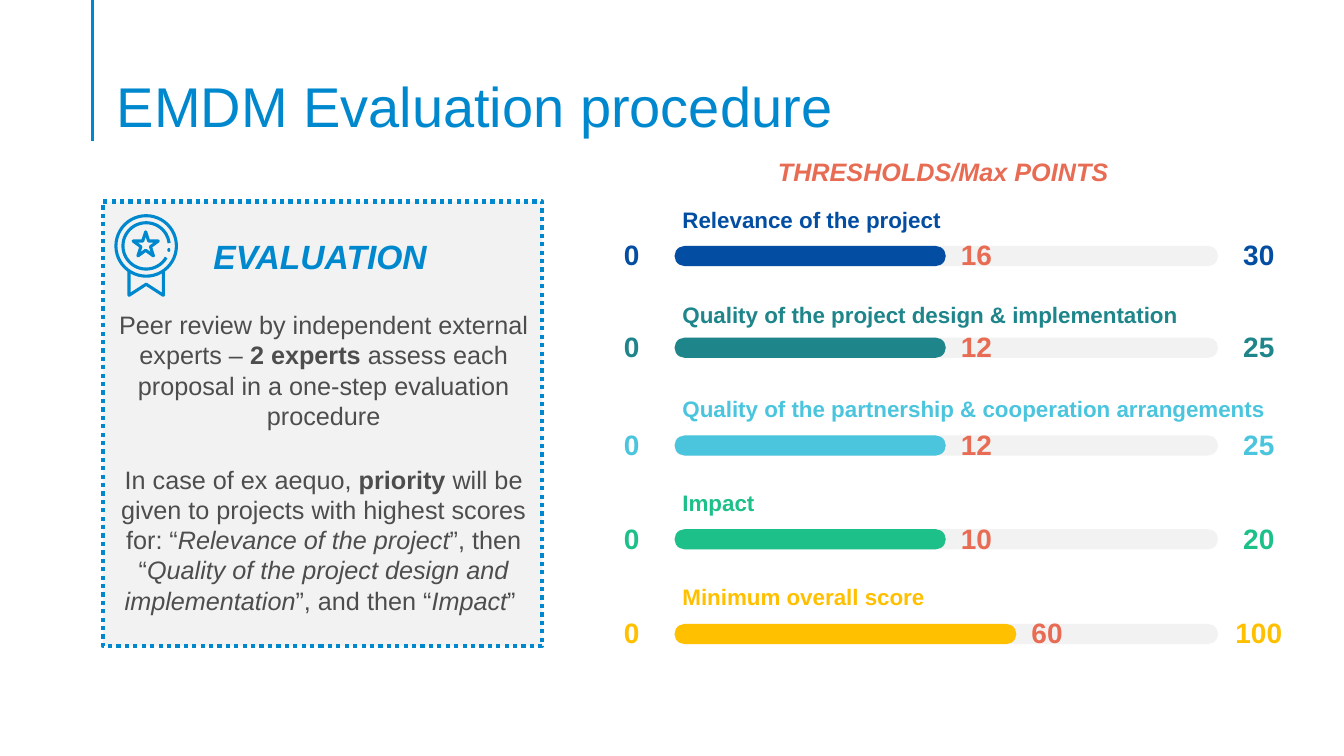
from lxml import etree
from pptx import Presentation
from pptx.dml.color import RGBColor
from pptx.enum import dml, shapes, text
from pptx.oxml import ns
from pptx.util import Inches, Pt

BLUE = RGBColor(0x00, 0x88, 0xCE)
NAVY = RGBColor(0x03, 0x4E, 0xA2)
TEAL = RGBColor(0x1E, 0x85, 0x8B)
SKY = RGBColor(0x4B, 0xC5, 0xDE)
GREEN = RGBColor(0x1E, 0xC0, 0x8A)
YELLOW = RGBColor(0xFF, 0xC0, 0x00)
CORAL = RGBColor(0xE7, 0x6C, 0x53)
GREY = RGBColor(0x4D, 0x4D, 0x4D)
PALE = RGBColor(0xF2, 0xF2, 0xF2)

FONT = "Arial"
CENTER = text.PP_ALIGN.CENTER
SHAPE = shapes.MSO_SHAPE

# Label, colour, bar top, bar length, threshold, maximum
CRITERIA = [
    ("Relevance of the project", NAVY, 2.44, 2.69, "16", "30"),
    ("Quality of the project design & implementation", TEAL, 3.35, 2.69, "12", "25"),
    ("Quality of the partnership & cooperation arrangements", SKY, 4.32, 2.69, "12", "25"),
    ("Impact", GREEN, 5.25, 2.69, "10", "20"),
    ("Minimum overall score", YELLOW, 6.19, 3.39, "60", "100"),
]

# Paragraphs of (text, bold, italic)
REVIEW_RULES = [
    [("Peer review by independent external experts – ", False, False),
     ("2 experts ", True, False),
     ("assess each proposal in a one-step evaluation procedure", False, False)],
    [("In case of ex aequo, ", False, False),
     ("priority", True, False),
     (" will be given to projects with highest scores for: “", False, False),
     ("Relevance of the project", False, True),
     ("”, then “", False, False),
     ("Quality of the project design and implementation", False, True),
     ("”, and then “", False, False),
     ("Impact", False, True),
     ("” ", False, False)],
]


def style_font(font, size, color, bold=False, italic=False):
    font.name, font.size = FONT, Pt(size)
    font.bold, font.italic = bold, italic
    font.color.rgb = color


def add_box(page, left, top, width, height):
    box = page.shapes.add_textbox(Inches(left), Inches(top), Inches(width), Inches(height))
    box.text_frame.word_wrap = True
    return box


def add_label(page, place, words, size, color, align=None, bold=True, italic=False):
    box = add_box(page, *place)
    para = box.text_frame.paragraphs[0]
    para.text = words
    para.alignment = align
    style_font(para.runs[0].font, size, color, bold, italic)
    return box


def add_form(page, kind, left, top, width, height, fill=None, line=None, weight=2.2):
    form = page.shapes.add_shape(kind, Inches(left), Inches(top), Inches(width), Inches(height))
    paint(form, fill, line, weight)
    return form


def paint(form, fill, line, weight):
    form.shadow.inherit = False
    if fill is None:
        form.fill.background()
    else:
        form.fill.solid()
        form.fill.fore_color.rgb = fill
    if line is None:
        form.line.fill.background()
    else:
        form.line.color.rgb = line
        form.line.width = Pt(weight)


def add_title(page, left, top, width, height):
    # Vertical rule beside the title
    rule = page.shapes.add_connector(
        shapes.MSO_CONNECTOR.STRAIGHT, Inches(left - 0.14), 0, Inches(left - 0.14), Inches(1.4))
    rule.line.color.rgb = BLUE
    rule.line.width = Pt(2.25)
    etree.SubElement(rule._element.spPr, ns.qn("a:effectLst"))

    box = add_label(page, (left, top, width, height), "EMDM Evaluation procedure",
                    40, BLUE, bold=False)
    box.text_frame.vertical_anchor = text.MSO_ANCHOR.BOTTOM
    box.text_frame.margin_bottom = 0
    box.text_frame.paragraphs[0].line_spacing = 0.9


def add_medal(page, left, top):
    # Outer ring, open inner ring with its dot, and star
    add_form(page, SHAPE.OVAL, left + 0.02, top + 0.02, 0.6, 0.6, line=BLUE)
    inner = add_form(page, SHAPE.ARC, left + 0.09, top + 0.09, 0.46, 0.46, line=BLUE)
    degree = 0.6
    inner.adjustments[0] = 30 * degree
    inner.adjustments[1] = 353 * degree
    add_form(page, SHAPE.OVAL, left + 0.53, top + 0.34, 0.03, 0.04, fill=BLUE)
    add_form(page, SHAPE.STAR_5_POINT, left + 0.19, top + 0.18, 0.25, 0.24, line=BLUE)

    # Ribbon
    points = [(0.15, 0.56), (0.15, 0.81), (0.32, 0.7), (0.49, 0.81), (0.49, 0.56)]
    corners = [(Inches(left + x), Inches(top + y)) for x, y in points]
    builder = page.shapes.build_freeform(*corners[0])
    builder.add_line_segments(corners[1:], close=False)
    paint(builder.convert_to_shape(), None, BLUE, 2.2)


def add_evaluation(page, left, top, width, height):
    # Dotted panel
    panel = add_form(page, SHAPE.RECTANGLE, left, top, width, height, PALE, BLUE, 3)
    panel.line.dash_style = dml.MSO_LINE.ROUND_DOT

    # Review rules
    frame = add_box(page, left + 0.02, top + 1.02, width - 0.02, 3.16).text_frame
    for index, spans in enumerate(REVIEW_RULES):
        para = frame.add_paragraph() if index else frame.paragraphs[0]
        para.alignment = CENTER
        para.space_after = Pt(6)
        if index:
            para.space_before = Pt(18)
        for words, bold, italic in spans:
            span = para.add_run()
            span.text = words
            style_font(span.font, 18, GREY, bold, italic)

    # Heading and icon
    add_medal(page, left + 0.11, top + 0.12)
    add_label(page, (left + 0.02, top + 0.29, 4.27, 0.5), "EVALUATION",
              24, BLUE, CENTER, italic=True)


def add_thresholds(page, left, top, width):
    add_label(page, (left - 0.03, top, width, 0.4), "THRESHOLDS/Max POINTS",
              18, CORAL, CENTER, italic=True)
    for index, (name, color, bar_top, length, threshold, maximum) in enumerate(CRITERIA):
        # Track and filled bar
        for bar_width, fill in ((width, PALE), (length, color)):
            bar = add_form(page, SHAPE.ROUNDED_RECTANGLE, left, bar_top, bar_width, 0.2, fill)
            bar.adjustments[0] = 0.5

        # Criterion name, then the figures along the bar
        add_label(page, (left - 0.02, top + 0.5 + 0.935 * index, 6.22, 0.37), name, 16, color)
        for number, number_left, number_color in (
                ("0", left - 0.83, color),
                (maximum, left + width, color),
                (threshold, left + length - 0.1, CORAL)):
            add_label(page, (number_left, bar_top - 0.13, 0.81, 0.44), number,
                      20, number_color, CENTER)


def main():
    deck = Presentation()
    deck.slide_width, deck.slide_height = Inches(13.33), Inches(7.5)
    page = deck.slides.add_slide(deck.slide_layouts[6])
    add_title(page, 1.06, 0.53, 11.5, 0.86)
    add_evaluation(page, 1.02, 2, 4.36, 4.41)
    add_thresholds(page, 6.69, 1.5, 5.39)
    deck.save("out.pptx")


if __name__ == "__main__":
    main()
